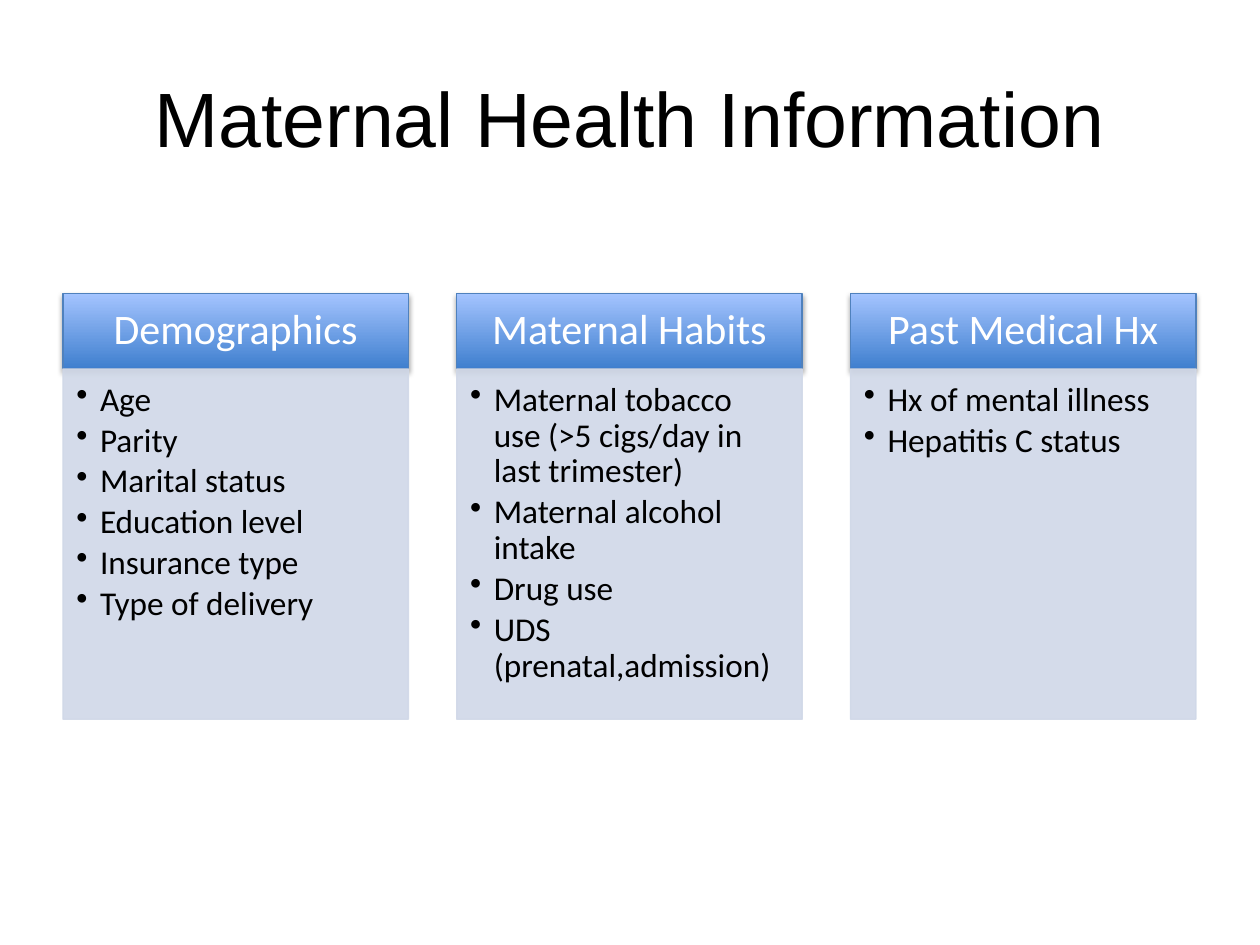
from lxml.etree import SubElement as Sub
from pptx import Presentation
from pptx.dml.color import RGBColor as RGB
from pptx.enum.shapes import MSO_SHAPE as Shape
from pptx.enum.text import MSO_ANCHOR as Anchor, PP_ALIGN as Align
from pptx.oxml.ns import qn
from pptx.util import Pt

COLORS = {"text": "000000", "head": "FFFFFF", "low": "3F7FCE", "high": "A4C4FF",
          "edge": "4F81BD", "body": "D0D8E8", "shade": "000000"}
LEFT, STEP, WIDTH = 36, 225, 197.4
TOP, HEAD, BODY = 167.6, 43.2, 200.2
CARDS = [
    ("Demographics", ["Age", "Parity", "Marital status", "Education level",
                      "Insurance type", "Type of delivery"]),
    ("Maternal Habits", ["Maternal tobacco use (>5 cigs/day in last trimester)",
                         "Maternal alcohol intake", "Drug use",
                         "UDS (prenatal,admission)"]),
    ("Past Medical Hx", ["Hx of mental illness", "Hepatitis C status"]),
]


def color(name):
    return RGB.from_string(COLORS[name])


def set_frame(frame, anchor, pads):
    """Wrap the text and set its anchor and left, top, right, bottom insets."""
    frame.word_wrap = True
    frame.vertical_anchor = anchor
    (frame.margin_left, frame.margin_top,
     frame.margin_right, frame.margin_bottom) = map(Pt, pads)


def add_run(para, text, font, size, name):
    run = para.add_run()
    run.text = text
    run.font.name = font
    run.font.size = Pt(size)
    run.font.color.rgb = color(name)


def add_rect(slide, x, y, height, edge):
    rect = slide.shapes.add_shape(Shape.RECTANGLE, Pt(x), Pt(y), Pt(WIDTH), Pt(height))
    rect.shadow.inherit = False
    rect.line.color.rgb = color(edge)
    rect.line.width = Pt(0.75)
    return rect


def add_shadow(shape):
    effects = shape._element.spPr.find(qn("a:effectLst"))
    outer = Sub(effects, qn("a:outerShdw"), blurRad=str(Pt(3.1)), dist=str(Pt(1.8)),
                dir="5400000", rotWithShape="0")
    shade = Sub(outer, qn("a:srgbClr"), val=COLORS["shade"])
    Sub(shade, qn("a:alpha"), val="35000")


def add_bullet(para):
    para.level = 1
    props = para._p.get_or_add_pPr()
    props.set("marL", str(Pt(13.5)))
    props.set("indent", str(Pt(-13.5)))
    Sub(props, qn("a:buChar"), char="•")


def add_title(slide, text):
    box = slide.shapes.add_textbox(Pt(36), Pt(21.6), Pt(648), Pt(90))
    set_frame(box.text_frame, Anchor.MIDDLE, (7.2, 3.6, 7.2, 3.6))
    para = box.text_frame.paragraphs[0]
    para.alignment = Align.CENTER
    add_run(para, text, "Arial", 44, "text")


def add_head(slide, x, text):
    rect = add_rect(slide, x, TOP, HEAD, "edge")
    rect.fill.gradient()
    rect.fill.gradient_angle = 90
    for stop, name in zip(rect.fill.gradient_stops, ("low", "high")):
        stop.color.rgb = color(name)
    add_shadow(rect)
    set_frame(rect.text_frame, Anchor.MIDDLE, (13.5, 7.7, 13.5, 7.7))
    para = rect.text_frame.paragraphs[0]
    para.alignment = Align.CENTER
    para.line_spacing = 0.9
    add_run(para, text, "Calibri", 24, "head")


def add_body(slide, x, items):
    rect = add_rect(slide, x, TOP + HEAD, BODY, "body")
    rect.fill.solid()
    rect.fill.fore_color.rgb = color("body")
    for tint in rect._element.spPr.iter(qn("a:srgbClr")):
        Sub(tint, qn("a:alpha"), val="90000")
    frame = rect.text_frame
    set_frame(frame, Anchor.TOP, (7.7, 7.7, 10.8, 12))
    for i, item in enumerate(items):
        para = frame.add_paragraph() if i else frame.paragraphs[0]
        add_bullet(para)
        para.alignment = Align.LEFT
        para.line_spacing = 0.9
        para.space_after = Pt(2.85)
        add_run(para, item, "Calibri", 19, "text")


def main():
    deck = Presentation()
    deck.slide_width, deck.slide_height = Pt(720), Pt(540)
    slide = deck.slides.add_slide(deck.slide_layouts[6])
    add_title(slide, "Maternal Health Information")
    for i, (head, items) in enumerate(CARDS):
        x = LEFT + i * STEP
        add_head(slide, x, head)
        add_body(slide, x, items)
    deck.save("out.pptx")


if __name__ == "__main__":
    main()
